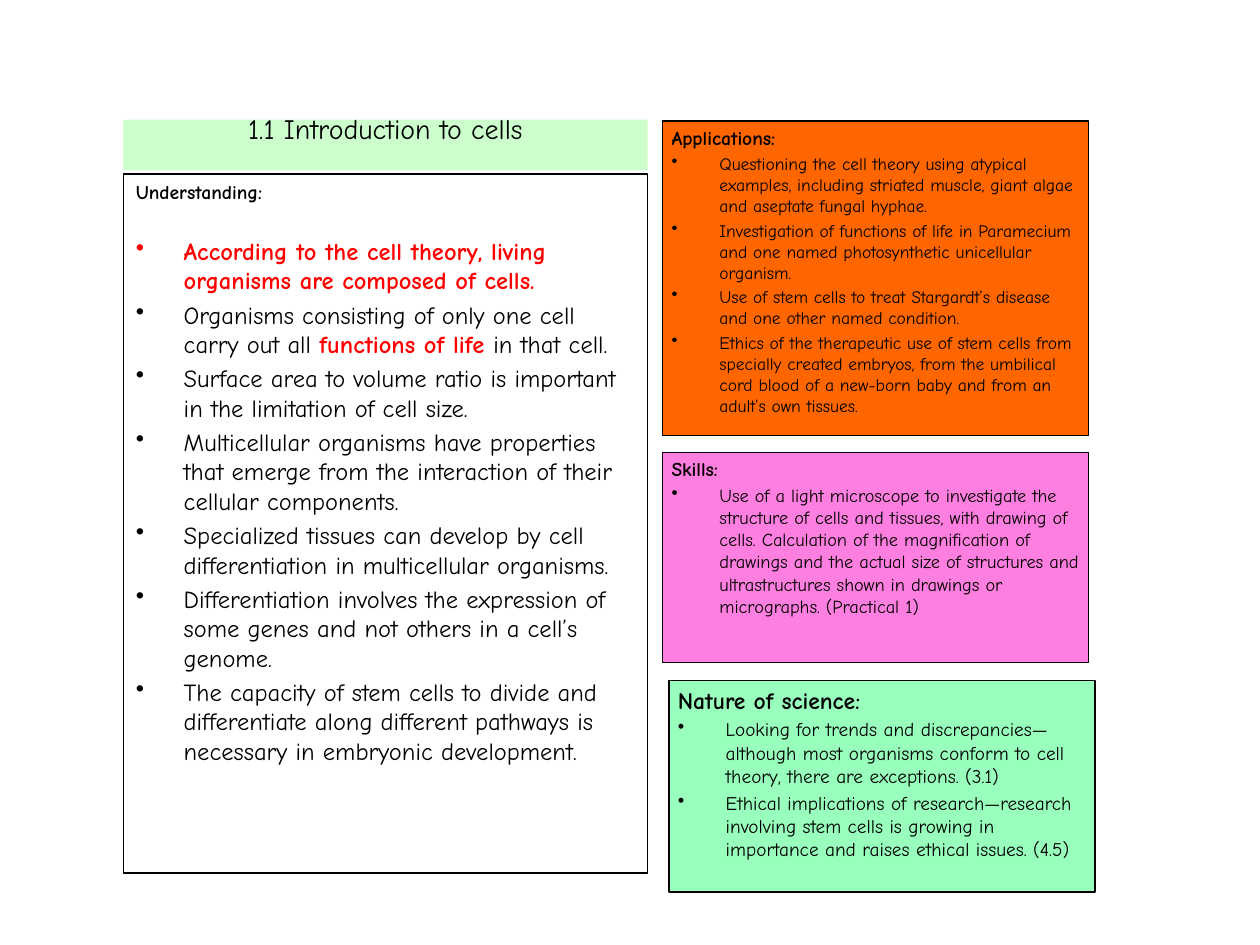
import pptx
import pptx.dml.color
import pptx.enum.shapes
import pptx.enum.text
import pptx.oxml
import pptx.oxml.ns
import pptx.util

RGBColor = pptx.dml.color.RGBColor
BLACK = RGBColor(0x00, 0x00, 0x00)
RED = RGBColor(0xFF, 0x00, 0x00)
PALE_GREEN = RGBColor(0xCC, 0xFF, 0xCC)
ORANGE = RGBColor(0xFF, 0x66, 0x00)
PINK = RGBColor(0xFF, 0x7F, 0xE1)
MINT = RGBColor(0x98, 0xFF, 0xBC)

FONT = "Comic Neue"
COLUMNS, ROWS = 100, 75
LEFT_COLUMN, LEFT_WIDTH = 9.8, 41.6
RIGHT_COLUMN, RIGHT_WIDTH = 52.6, 33.8
WIDE_INSETS = (0.1, 0.05)
NARROW_INSETS = (0.07, 0.04)


class SlideBuilder:
    """Holds the text style, the grid and the current slide."""

    def __init__(self, presentation):
        self.column = presentation.slide_width / COLUMNS
        self.row = presentation.slide_height / ROWS
        self.slide = presentation.slides.add_slide(presentation.slide_layouts[6])

    def box(self, column, row, width, height, fill=None, outlined=True, insets=WIDE_INSETS):
        shape = self.slide.shapes.add_shape(
            pptx.enum.shapes.MSO_SHAPE.RECTANGLE,
            int(column * self.column), int(row * self.row),
            int(width * self.column), int(height * self.row))
        shape.shadow.inherit = False
        if fill is None:
            shape.fill.background()
        else:
            shape.fill.solid()
            shape.fill.fore_color.rgb = fill
        if outlined:
            shape.line.color.rgb = BLACK
            shape.line.width = pptx.util.Pt(0.75)
        else:
            shape.line.fill.background()
        frame = shape.text_frame
        frame.word_wrap = True
        frame.vertical_anchor = pptx.enum.text.MSO_ANCHOR.TOP
        frame.margin_left = frame.margin_right = pptx.util.Inches(insets[0])
        frame.margin_top = frame.margin_bottom = pptx.util.Inches(insets[1])
        return frame

    def style(self, paragraph, size, bold=False, color=BLACK):
        paragraph.alignment = pptx.enum.text.PP_ALIGN.LEFT
        paragraph.space_before = pptx.util.Pt(0.2 * size)
        font = paragraph.font
        font.name, font.size = FONT, pptx.util.Pt(size)
        font.bold = bold
        font.color.rgb = color

    def title(self, text, *place):
        frame = self.box(*place, fill=PALE_GREEN, outlined=False)
        frame.vertical_anchor = pptx.enum.text.MSO_ANCHOR.MIDDLE
        paragraph = frame.paragraphs[0]
        self.style(paragraph, 16)
        paragraph.space_before = pptx.util.Pt(0)
        paragraph.alignment = pptx.enum.text.PP_ALIGN.CENTER
        paragraph.add_run().text = text
        paragraph.add_line_break()

    def bullet(self, frame, parts, size):
        """Add a bullet; parts holds (text, emphasized) pairs."""
        paragraph = frame.add_paragraph()
        properties = paragraph._p.get_or_add_pPr()
        indent = pptx.util.Inches(0.38)
        properties.set("marL", str(indent))
        properties.set("indent", str(-indent))
        mark = pptx.oxml.parse_xml(
            f'<a:buChar {pptx.oxml.ns.nsdecls("a")} char="•"/>')
        properties.append(mark)
        self.style(paragraph, size)
        for text, emphasized in parts:
            run = paragraph.add_run()
            run.text = text
            if emphasized:
                run.font.bold = True
                run.font.color.rgb = RED

    def panel(self, heading, bullets, place, heading_size, size, gap=0, **look):
        frame = self.box(*place, **look)
        paragraph = frame.paragraphs[0]
        self.style(paragraph, heading_size, bold=True)
        paragraph.space_after = pptx.util.Pt(gap)
        paragraph.add_run().text = heading
        for item in bullets:
            self.bullet(frame, [(item, False)] if isinstance(item, str) else item, size)


UNDERSTANDING = [
    [("According to the cell theory, living organisms are composed of cells.", True)],
    [("Organisms consisting of only one cell carry out all ", False),
     ("functions of life ", True),
     ("in that cell.", False)],
    "Surface area to volume ratio is important in the limitation of cell size.",
    "Multicellular organisms have properties that emerge from the interaction "
    "of their cellular components.",
    "Specialized tissues can develop by cell differentiation in multicellular organisms.",
    "Differentiation involves the expression of some genes and not others in a cell’s genome.",
    "The capacity of stem cells to divide and differentiate along different pathways "
    "is necessary in embryonic development.",
]
APPLICATIONS = [
    "Questioning the cell theory using atypical examples, including striated muscle, "
    "giant algae and aseptate fungal hyphae.",
    "Investigation of functions of life in Paramecium and one named photosynthetic "
    "unicellular organism.",
    "Use of stem cells to treat Stargardt’s disease and one other named condition.",
    "Ethics of the therapeutic use of stem cells from specially created embryos, from the "
    "umbilical cord blood of a new-born baby and from an adult’s own tissues.",
]
SKILLS = [
    "Use of a light microscope to investigate the structure of cells and tissues, with "
    "drawing of cells. Calculation of the magnification of drawings and the actual size of "
    "structures and ultrastructures shown in drawings or micrographs. (Practical 1)",
]
NATURE_OF_SCIENCE = [
    "Looking for trends and discrepancies—although most organisms conform to cell theory, "
    "there are exceptions. (3.1)",
    "Ethical implications of research—research involving stem cells is growing in importance "
    "and raises ethical issues. (4.5)",
]


def main():
    presentation = pptx.Presentation()
    presentation.slide_width = pptx.util.Inches(10)
    presentation.slide_height = pptx.util.Inches(7.5)
    builder = SlideBuilder(presentation)

    # Left side: title and understanding
    builder.title("1.1 Introduction to cells", LEFT_COLUMN, 9.5, LEFT_WIDTH, 4)
    builder.panel("Understanding:", UNDERSTANDING,
                  (LEFT_COLUMN, 13.8, LEFT_WIDTH, 55.5), 11.2, 14, gap=15.6)

    # Right side: three coloured panels
    for heading, bullets, column, row, height, heading_size, size, fill in (
        ("Applications:", APPLICATIONS, RIGHT_COLUMN, 9.6, 25, 11.2, 10, ORANGE),
        ("Skills:", SKILLS, RIGHT_COLUMN, 35.9, 16.7, 11.2, 10.5, PINK),
        ("Nature of science:", NATURE_OF_SCIENCE, RIGHT_COLUMN + 0.5, 54, 16.8, 13.5, 11, MINT),
    ):
        builder.panel(heading, bullets, (column, row, RIGHT_WIDTH, height),
                      heading_size, size, fill=fill, insets=NARROW_INSETS)

    presentation.save("out.pptx")


if __name__ == "__main__":
    main()
